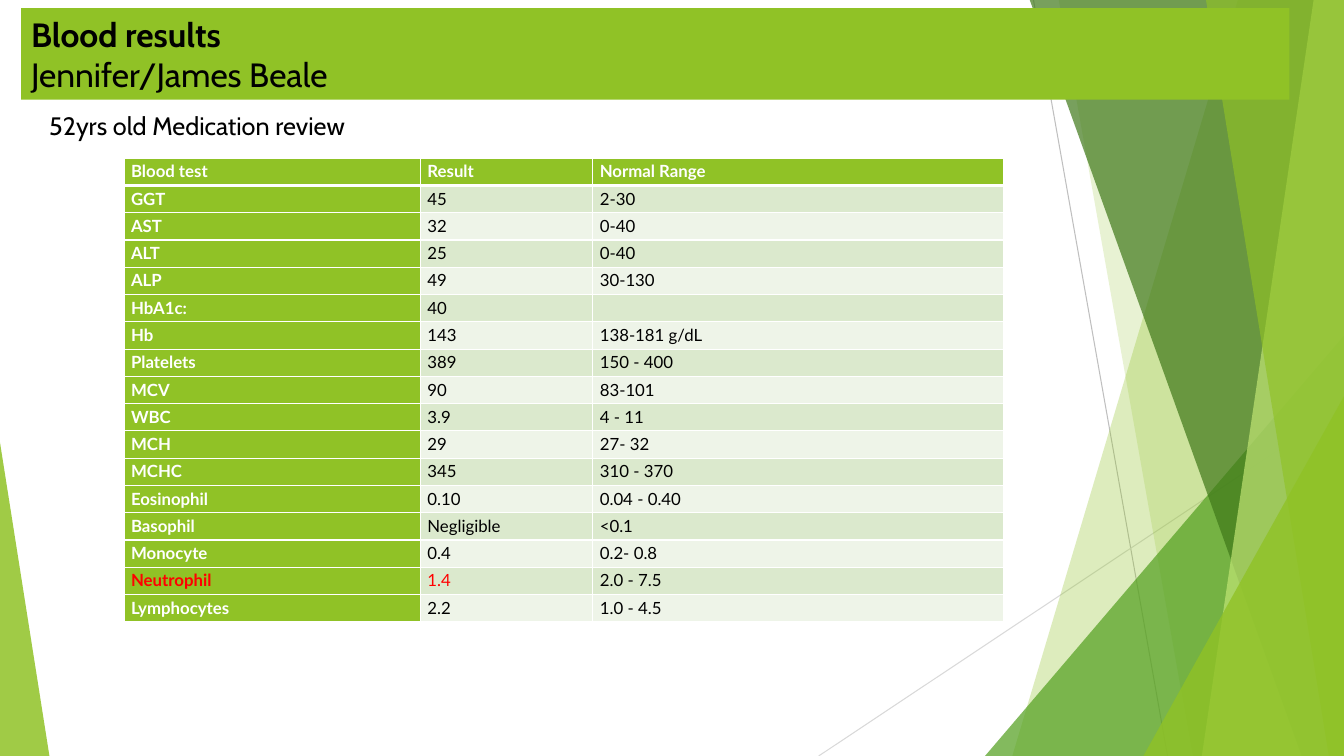
from lxml import etree
from pptx import Presentation
from pptx.dml.color import RGBColor
from pptx.enum import shapes, text
from pptx.oxml import ns
from pptx.util import Inches, Pt

LIME = RGBColor(0x90, 0xC2, 0x26)
GREEN = RGBColor(0x54, 0xA0, 0x21)
FOREST = RGBColor(0x3F, 0x78, 0x19)
PALE_LIME = RGBColor(0xC0, 0xE4, 0x74)
BAND_DARK = RGBColor(0xDB, 0xE9, 0xCD)
BAND_LIGHT = RGBColor(0xEE, 0xF4, 0xE8)
GREY = RGBColor(0xBF, 0xBF, 0xBF)
LIGHT_GREY = RGBColor(0xD9, 0xD9, 0xD9)
WHITE = RGBColor(0xFF, 0xFF, 0xFF)
BLACK = RGBColor(0, 0, 0)
RED = RGBColor(0xFF, 0, 0)

WIDTH, HEIGHT = 13.33, 7.5
TABLE_HEIGHT = 4.6
COLUMN_WIDTHS = (2.94, 1.71, 4.07)
HEADINGS = ("Blood test", "Result", "Normal Range")
RESULTS = (
    ("GGT", "45", "2-30"),
    ("AST", "32", "0-40"),
    ("ALT", "25", "0-40"),
    ("ALP", "49", "30-130"),
    ("HbA1c:", "40", ""),
    ("Hb", "143", "138-181 g/dL"),
    ("Platelets", "389", "150 - 400"),
    ("MCV", "90", "83-101"),
    ("WBC", "3.9", "4 - 11"),
    ("MCH", "29", "27- 32"),
    ("MCHC", "345", "310 - 370"),
    ("Eosinophil", "0.10", "0.04 - 0.40"),
    ("Basophil", "Negligible", "<0.1"),
    ("Monocyte", "0.4", "0.2- 0.8"),
    ("Neutrophil", "1.4", "2.0 - 7.5"),
    ("Lymphocytes", "2.2", "1.0 - 4.5"),
)
ABNORMAL = "Neutrophil"


def apply(target, **values):
    for name, value in values.items():
        setattr(target, name, value)


def child(parent, tag, **attributes):
    return etree.SubElement(parent, ns.qn(tag), attributes)


def write(paragraph, words, color, **font):
    run = paragraph.add_run()
    run.text = words
    apply(run.font, **font)
    run.font.color.rgb = color


def paint(shape, color, opacity=100):
    shape.shadow.inherit = False
    shape.fill.solid()
    shape.fill.fore_color.rgb = color
    shape.line.fill.background()
    if opacity < 100:
        srgb = shape.fill._xPr.find(".//" + ns.qn("a:srgbClr"))
        child(srgb, "a:alpha", val=str(opacity * 1000))


def add_hairline(slide, start, end, color):
    line = slide.shapes.add_connector(
        shapes.MSO_CONNECTOR.STRAIGHT, *map(Inches, start + end))
    line.line.color.rgb = color
    line.line.width = Pt(0.75)
    child(line._element.spPr, "a:effectLst")


def add_shard(slide, top_x, bottom_x, color, opacity):
    """Panel with a slanted left edge that runs to the right of the slide."""
    corners = [(top_x, -0.01), (WIDTH, -0.01), (WIDTH, HEIGHT), (bottom_x, HEIGHT)]
    corners = [(Inches(x), Inches(y)) for x, y in corners]
    builder = slide.shapes.build_freeform(*corners[0])
    builder.add_line_segments(corners[1:], close=True)
    paint(builder.convert_to_shape(), color, opacity)


def add_wedge(slide, box, apex, color, opacity):
    wedge = slide.shapes.add_shape(
        shapes.MSO_SHAPE.ISOSCELES_TRIANGLE, *map(Inches, box))
    wedge.adjustments[0] = apex
    paint(wedge, color, opacity)


def add_backdrop(slide):
    add_hairline(slide, (10.25, 0), (11.58, HEIGHT), GREY)
    add_hairline(slide, (WIDTH, 4.03), (8.12, HEIGHT), LIGHT_GREY)
    add_shard(slide, 12.28, 10.04, LIME, 30)
    add_shard(slide, 10.5, 11.83, LIME, 20)
    add_wedge(slide, (9.77, 3.33, 3.56, 4.17), 1, GREEN, 72)
    add_shard(slide, 10.21, 12.91, FOREST, 70)
    add_shard(slide, 13.03, 11.92, PALE_LIME, 70)
    add_shard(slide, 11.96, 13.18, LIME, 65)
    add_wedge(slide, (11.34, 3.93, 1.99, 3.57), 1, LIME, 80)
    add_wedge(slide, (0, 4.39, 0.49, 3.11), 0, LIME, 85)


def add_title(slide):
    banner = slide.shapes.add_shape(
        shapes.MSO_SHAPE.RECTANGLE, *map(Inches, (0.21, 0.08, 12.58, 0.91)))
    paint(banner, LIME)
    frame = banner.text_frame
    apply(frame, word_wrap=True, vertical_anchor=text.MSO_ANCHOR.MIDDLE,
          auto_size=text.MSO_AUTO_SIZE.SHAPE_TO_FIT_TEXT)
    lines = (frame.paragraphs[0], "Blood results", True), (
        frame.add_paragraph(), "Jennifer/James Beale", False)
    for paragraph, words, bold in lines:
        paragraph.alignment = text.PP_ALIGN.LEFT
        write(paragraph, words, BLACK, name="Cabin", size=Pt(24), bold=bold)


def add_subtitle(slide):
    box = slide.shapes.add_textbox(*map(Inches, (0.39, 1.04, 10.83, 1.81)))
    box.text_frame.word_wrap = True
    write(box.text_frame.paragraphs[0], "52yrs old Medication review", BLACK,
          name="Cabin", size=Pt(18))


def add_borders(cell, bottom_width):
    properties = cell._tc.get_or_add_tcPr()
    for side, width in (("L", 1), ("R", 1), ("T", 1), ("B", bottom_width)):
        border = child(properties, "a:ln" + side, w=str(Pt(width)))
        child(child(border, "a:solidFill"), "a:srgbClr", val=str(WHITE))


def fill_cell(cell, words, fill, color, bold, bottom_width):
    add_borders(cell, bottom_width)
    cell.fill.solid()
    cell.fill.fore_color.rgb = fill
    apply(cell, margin_left=Inches(0.07), margin_right=Inches(0.07),
          margin_top=0, margin_bottom=0)
    paragraph = cell.text_frame.paragraphs[0]
    apply(paragraph, line_spacing=1.15, space_after=Pt(8))
    if words:
        write(paragraph, words, color, name="Lato", size=Pt(12), bold=bold)
    else:
        child(paragraph._p, "a:endParaRPr", sz="1200")


def add_results(slide):
    rows = (HEADINGS,) + RESULTS
    table = slide.shapes.add_table(
        len(rows), len(HEADINGS), Inches(1.23), Inches(1.57),
        Inches(sum(COLUMN_WIDTHS)), Inches(TABLE_HEIGHT)).table
    for column, width in zip(table.columns, COLUMN_WIDTHS):
        column.width = Inches(width)
    for r, values in enumerate(rows):
        table.rows[r].height = Inches(TABLE_HEIGHT / len(rows))
        for c, words in enumerate(values):
            heading = r == 0 or c == 0
            band = BAND_DARK if r % 2 else BAND_LIGHT
            color = WHITE if heading else BLACK
            if values[0] == ABNORMAL and c < 2:
                color = RED
            fill_cell(table.cell(r, c), words, LIME if heading else band,
                      color, heading, 3 if r == 0 else 1)


def main():
    deck = Presentation()
    apply(deck, slide_width=Inches(WIDTH), slide_height=Inches(HEIGHT))
    slide = deck.slides.add_slide(deck.slide_layouts[6])
    add_backdrop(slide)
    add_title(slide)
    add_subtitle(slide)
    add_results(slide)
    deck.save("out.pptx")


if __name__ == "__main__":
    main()
